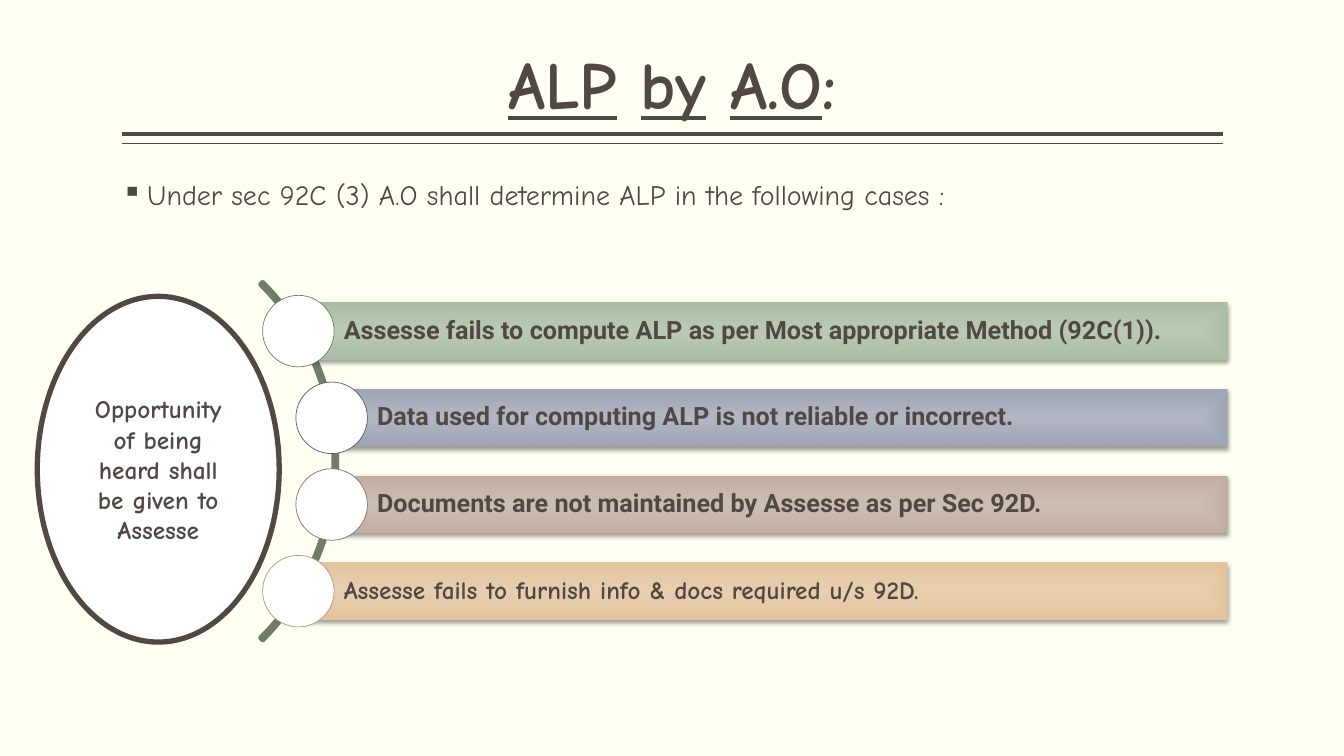
import dataclasses

import lxml.etree
import pptx
import pptx.dml.color
import pptx.enum.shapes
import pptx.enum.text
import pptx.oxml.ns
import pptx.util

SHAPES = pptx.enum.shapes.MSO_SHAPE
ALIGN = pptx.enum.text.PP_ALIGN
ANCHOR = pptx.enum.text.MSO_ANCHOR
qn = pptx.oxml.ns.qn


@dataclasses.dataclass(frozen=True)
class Theme:
    background: str = "FFFFF3"
    ink: str = "514843"
    paper: str = "FFFFFF"
    arc: str = "6D7D66"
    shadow: str = "000000"
    script_font: str = "Comic Neue"
    plain_font: str = "Roboto"
    title_size: int = 48
    body_size: int = 20
    label_size: int = 18
    heavy_line: float = 3.78
    thin_line: float = 0.5


THEME = Theme()
COLUMNS, ROWS = 160, 90
RULE_LEFT, RULE_WIDTH = 14.52, 131.04
BAR_TOP, BAR_PITCH, BAR_HEIGHT, BAR_RIGHT = 36, 10.32, 6.84, 146.16
OUTER_LEFT, INNER_LEFT = 35.52, 39.48
NODE_SIZE = 8.52

CASES = [
    ("Assesse fails to compute ALP as per Most appropriate Method (92C(1)).",
     OUTER_LEFT, ("BAC9B4", "AABDA3"), "6D7D66", THEME.plain_font),
    ("Data used for computing ALP is not reliable or incorrect.",
     INNER_LEFT, ("B1B6C2", "9EA5B5"), "525A6A", THEME.plain_font),
    ("Documents are not maintained by Assesse as per Sec 92D.",
     INNER_LEFT, ("CCBDB3", "C2AEA1"), "827266", THEME.plain_font),
    ("Assesse fails to furnish info & docs required u/s 92D.",
     OUTER_LEFT, ("E8CEAF", "E4C49D"), "AE9A7E", THEME.script_font),
]


def rgb(code):
    return pptx.dml.color.RGBColor.from_string(code)


def add_xml(parent, tag, **attributes):
    return lxml.etree.SubElement(parent, qn(tag), attributes)


def write_text(frame, text, size, font=THEME.script_font, bold=False, underlined=(),
               align=ALIGN.LEFT, anchor=ANCHOR.TOP, insets=(0, 0.05, 0, 0.05), spacing=0.9):
    frame.word_wrap = True
    frame.auto_size = pptx.enum.text.MSO_AUTO_SIZE.NONE
    frame.vertical_anchor = anchor
    (frame.margin_left, frame.margin_top,
     frame.margin_right, frame.margin_bottom) = map(pptx.util.Inches, insets)
    paragraph = frame.paragraphs[0]
    paragraph.alignment = align
    paragraph.line_spacing = spacing
    for piece in [text] if isinstance(text, str) else text:
        run = paragraph.add_run()
        run.text = piece
        run.font.name = font
        run.font.size = pptx.util.Pt(size)
        run.font.bold = bold
        run.font.underline = piece in underlined
        run.font.color.rgb = rgb(THEME.ink)
    return paragraph


class SlideBuilder:
    def __init__(self, presentation, theme):
        self.theme = theme
        self.column = presentation.slide_width / COLUMNS
        self.row = presentation.slide_height / ROWS
        self.slide = presentation.slides.add_slide(presentation.slide_layouts[5])
        self.slide.background.fill.solid()
        self.slide.background.fill.fore_color.rgb = rgb(theme.background)

    def place(self, left, top, width, height):
        return (round(left * self.column), round(top * self.row),
                round(width * self.column), round(height * self.row))

    def title(self, pieces, underlined, box):
        shape = self.slide.shapes.title
        shape.left, shape.top, shape.width, shape.height = self.place(*box)
        write_text(shape.text_frame, pieces, self.theme.title_size, bold=True,
                   underlined=underlined, align=ALIGN.CENTER, anchor=ANCHOR.BOTTOM)

    def rule(self, left, top, width, weight):
        start_x, start_y, length, _ = self.place(left, top, width, 0)
        line = self.slide.shapes.add_connector(
            pptx.enum.shapes.MSO_CONNECTOR.STRAIGHT,
            start_x, start_y, start_x + length, start_y)
        line.line.color.rgb = rgb(self.theme.ink)
        line.line.width = pptx.util.Pt(weight)
        add_xml(line._element.spPr, "a:effectLst")

    def bullet(self, text, box):
        shape = self.slide.shapes.add_textbox(*self.place(*box))
        paragraph = write_text(shape.text_frame, text, self.theme.body_size)
        properties = paragraph._p.get_or_add_pPr()
        indent = pptx.util.Inches(0.25)
        properties.set("marL", str(indent))
        properties.set("indent", str(-indent))
        add_xml(properties, "a:buChar", char="▪")

    def shape(self, kind, box, fill=None, line=None, weight=0):
        shape = self.slide.shapes.add_shape(kind, *self.place(*box))
        shape.shadow.inherit = False
        if fill:
            shape.fill.solid()
            shape.fill.fore_color.rgb = rgb(fill)
        else:
            shape.fill.background()
        if line:
            shape.line.color.rgb = rgb(line)
            shape.line.width = pptx.util.Pt(weight)
        else:
            shape.line.fill.background()
        return shape

    def arc(self, box):
        shape = self.shape(SHAPES.BLOCK_ARC, box, line=self.theme.arc,
                           weight=self.theme.heavy_line)
        for index, value in enumerate((189, 27, 0.005)):
            shape.adjustments[index] = value

    def bar(self, text, font, colors, box):
        shape = self.shape(SHAPES.RECTANGLE, box)
        shape.fill.gradient()
        for stop, color in zip(shape.fill.gradient_stops, colors):
            stop.color.rgb = rgb(color)
        properties = shape._element.spPr
        gradient = properties.find(qn("a:gradFill"))
        gradient.remove(gradient.find(qn("a:lin")))
        center = add_xml(gradient, "a:path", path="rect")
        add_xml(center, "a:fillToRect", l="50000", t="50000", r="50000", b="50000")
        shadow = add_xml(properties.find(qn("a:effectLst")), "a:outerShdw",
                         blurRad=str(pptx.util.Pt(3.5)), dist=str(pptx.util.Pt(2)),
                         dir="5400000", algn="ctr", rotWithShape="0")
        color = add_xml(shadow, "a:srgbClr", val=self.theme.shadow)
        add_xml(color, "a:alpha", val="38000")
        write_text(shape.text_frame, text, self.theme.label_size, font=font, bold=True,
                   anchor=ANCHOR.MIDDLE, insets=(0.45, 0.05, 0.05, 0.05))

    def case(self, index, text, left, colors, outline, font):
        top = BAR_TOP + index * BAR_PITCH
        self.bar(text, font, colors, (left, top, BAR_RIGHT - left, BAR_HEIGHT))
        node = (left - NODE_SIZE / 2, top + (BAR_HEIGHT - NODE_SIZE) / 2,
                NODE_SIZE, NODE_SIZE)
        self.shape(SHAPES.OVAL, node, self.theme.paper, outline, self.theme.thin_line)

    def oval(self, text, box):
        shape = self.shape(SHAPES.OVAL, box, self.theme.paper, self.theme.ink,
                           self.theme.heavy_line)
        write_text(shape.text_frame, text, self.theme.label_size, bold=True,
                   align=ALIGN.CENTER, anchor=ANCHOR.MIDDLE,
                   insets=(0.1, 0.05, 0.1, 0.05), spacing=1.0)


def main():
    presentation = pptx.Presentation()
    presentation.slide_width = pptx.util.Inches(13.33)
    presentation.slide_height = pptx.util.Inches(7.5)
    builder = SlideBuilder(presentation, THEME)
    builder.rule(RULE_LEFT, 15.96, RULE_WIDTH, 3)
    builder.rule(RULE_LEFT, 17.1, RULE_WIDTH, 1)
    builder.title(["ALP", " ", "by", " ", "A.O", ":"], ("ALP", "by", "A.O"),
                  (RULE_LEFT, 0.96, RULE_WIDTH, 14.4))
    builder.bullet("Under sec 92C (3) A.O shall determine ALP in the following cases :",
                   (RULE_LEFT, 21, RULE_WIDTH, 60))
    builder.arc((-20.04, 24.84, 60.12, 60.12))
    for index, case in enumerate(CASES):
        builder.case(index, *case)
    builder.oval("Opportunity of being heard shall be given to Assesse",
                 (4.44, 35.28, 28.8, 41.16))
    presentation.save("out.pptx")


if __name__ == "__main__":
    main()
